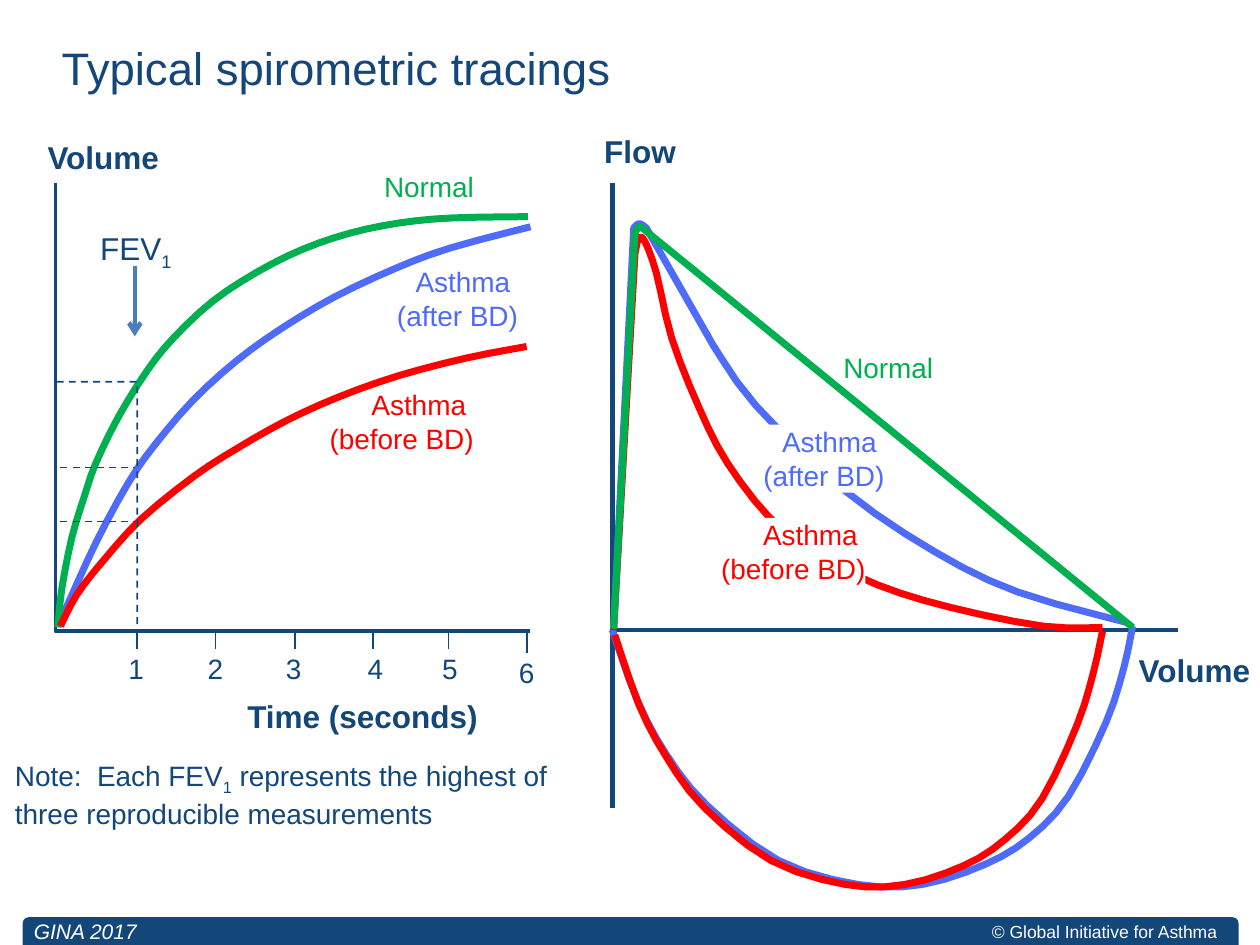
from lxml.etree import SubElement
from pptx import Presentation
from pptx.dml.color import RGBColor
from pptx.enum.dml import MSO_LINE
from pptx.enum.shapes import MSO_CONNECTOR, MSO_SHAPE
from pptx.enum.text import MSO_ANCHOR, PP_ALIGN
from pptx.oxml.ns import qn
from pptx.util import Inches, Pt

NAVY, GREEN, BLUE, RED, WHITE = "134679", "00B050", "4E6BFA", "FF0000", "FFFFFF"
LEFT, CENTER, RIGHT = PP_ALIGN.LEFT, PP_ALIGN.CENTER, PP_ALIGN.RIGHT
color = RGBColor.from_string

deck = Presentation()
deck.slide_width, deck.slide_height = Inches(10), Inches(7.5)
page = deck.slides.add_slide(deck.slide_layouts[6])


def add_text(text, left, top, width, height, size=16, ink=NAVY, align=RIGHT, bold=False,
             italic=False, wrap=False, inset=True, fill=None, anchor=MSO_ANCHOR.TOP):
    box = page.shapes.add_textbox(Inches(left), Inches(top), Inches(width), Inches(height))
    if fill:
        box.fill.solid()
        box.fill.fore_color.rgb = color(fill)
    frame = box.text_frame
    frame.word_wrap = wrap
    frame.vertical_anchor = anchor
    if not inset:
        frame.margin_left = frame.margin_right = frame.margin_top = frame.margin_bottom = 0
    para = frame.paragraphs[0]
    para.alignment = align
    for row, line in enumerate(text.split("\n")):
        if row:
            para.add_line_break()
        for part, words in enumerate(line.split("_")):
            if not words:
                continue
            span = para.add_run()
            span.text = words
            font = span.font
            font.name, font.size, font.bold, font.italic = "Arial", Pt(size), bold, italic
            font.color.rgb = color(ink)
            if part % 2:
                span._r.get_or_add_rPr().set("baseline", "-25000")


def add_path(knots, ink, width=4, dash=None):
    points = [knots[0]]
    padded = [knots[0], *knots, knots[-1]]
    for a, b, c, d in zip(padded, padded[1:], padded[2:], padded[3:]):
        if b == c:
            continue
        steps = 1 if a == b and c == d else 3
        for step in range(1, steps + 1):
            t = step / steps
            points.append([
                q + t * (r - p) / 2 + t**2 * (2 * p - 5 * q + 4 * r - s) / 2
                + t**3 * (3 * q - p - 3 * r + s) / 2
                for p, q, r, s in zip(a, b, c, d)])
    spots = [(Inches(x), Inches(y)) for x, y in points]
    builder = page.shapes.build_freeform(*spots[0], scale=1.0)
    builder.add_line_segments(spots[1:], close=False)
    curve = builder.convert_to_shape()
    curve.shadow.inherit = False
    curve.fill.background()
    curve.line.color.rgb = color(ink)
    curve.line.width = Pt(width)
    curve.line.dash_style = dash


footer = page.shapes.add_shape(MSO_SHAPE.ROUND_2_SAME_RECTANGLE,
                               Inches(0.18), Inches(7.28), Inches(9.65), Inches(0.24))
footer.shadow.inherit = False
footer.adjustments[0] = 0.2
footer.fill.solid()
footer.fill.fore_color.rgb = color(NAVY)
footer.line.fill.background()
add_text("© Global Initiative for Asthma", 7.82, 7.27, 1.89, 0.24, size=10, ink=WHITE,
         align=CENTER, inset=False, anchor=MSO_ANCHOR.MIDDLE)

add_text("Time (seconds)", 1.84, 5.48, 2.05, 0.4, size=18, bold=True)
add_text("Volume", 0.27, 1.05, 1.09, 0.4, size=18, bold=True)
add_text("Note:  Each FEV_1_ represents the highest of three reproducible measurements",
         0.02, 5.97, 4.48, 0.64, align=LEFT, wrap=True)
add_text("Typical spirometric tracings", 0.39, 0.27, 8.11, 1.02, size=26, align=LEFT, wrap=True)
add_text("FEV_1", 0.68, 1.77, 0.78, 0.4, size=18)

add_path([(0.44, 1.45), (0.44, 1.45), (0.44, 5.01), (0.44, 5.01), (4.21, 5.01), (4.21, 5.01)],
         NAVY, width=2)
volume_curves = [
    (BLUE, [(0.46, 4.97), (0.55, 4.77), (0.77, 4.29), (1.02, 3.83), (1.23, 3.53), (1.53, 3.18),
            (1.87, 2.87), (2.23, 2.61), (2.65, 2.36), (3.14, 2.13), (3.57, 1.97), (4.21, 1.8)]),
    (GREEN, [(0.46, 4.98), (0.49, 4.68), (0.57, 4.27), (0.67, 3.94), (0.76, 3.68), (0.94, 3.31),
             (1.17, 2.94), (1.38, 2.68), (1.69, 2.39), (2.04, 2.16), (2.4, 1.98), (2.78, 1.85),
             (3.17, 1.77), (3.59, 1.73), (4.19, 1.72)]),
    (RED, [(0.48, 4.97), (0.61, 4.72), (0.82, 4.45), (1.12, 4.12), (1.54, 3.78), (1.88, 3.56),
           (2.27, 3.34), (2.69, 3.15), (3.17, 2.98), (3.71, 2.84), (4.18, 2.75)]),
]
for ink, knots in volume_curves:
    add_path(knots, ink)
add_path([(0.45, 3.03), (0.45, 3.03), (1.09, 3.03), (1.09, 3.03), (1.09, 4.96), (1.09, 4.96)],
         NAVY, width=1, dash=MSO_LINE.DASH)

lines = [
    (0.48, 3.71, 1.07, 3.71, NAVY, 1, MSO_LINE.DASH, False),
    (0.48, 4.14, 1.07, 4.14, NAVY, 1, MSO_LINE.DASH, False),
    (1.07, 2.11, 1.07, 2.67, "4B7EBC", 2.5, None, True),
    (4.86, 1.45, 4.86, 6.41, NAVY, 2.5, None, False),
    (9.35, 5, 4.88, 5, NAVY, 2.5, None, False),
]
tick_places = [1.09, 1.71, 2.34, 2.96, 3.56, 4.18]
label_places = [0.92, 1.55, 2.17, 2.82, 3.41, 4.02]
for second, (x, label_left) in enumerate(zip(tick_places, label_places), 1):
    drop = 0.03 if second == 6 else 0
    lines.append((x, 5.15 + drop, x, 4.99 + drop, NAVY, 1, None, False))
    add_text(str(second), label_left, 5.12 + drop, 0.32, 0.37, align=CENTER)
for x1, y1, x2, y2, ink, width, dash, arrow in lines:
    line = page.shapes.add_connector(MSO_CONNECTOR.STRAIGHT, Inches(x1), Inches(y1),
                                     Inches(x2), Inches(y2))
    line.line.color.rgb = color(ink)
    line.line.width = Pt(width)
    line.line.dash_style = dash
    if arrow:
        SubElement(line.line._get_or_add_ln(), qn("a:tailEnd"), type="arrow")
    SubElement(line._element.spPr, qn("a:effectLst"))

add_text("Normal", 2.94, 1.3, 0.92, 0.37, ink=GREEN)
add_text("Asthma \n(after BD)", 3.04, 2.05, 1.17, 0.64, ink=BLUE)
add_text("Asthma \n(before BD)", 2.5, 3.03, 1.36, 0.64, ink=RED)
add_text("Flow", 4.66, 1, 0.84, 0.5, size=18, align=CENTER, bold=True)
add_text("Volume", 8.93, 5.12, 1.09, 0.4, size=18, bold=True)
add_text("Normal", 6.52, 2.73, 1.06, 0.37, ink=GREEN, align=CENTER)

add_path([(4.86, 5), (5.06, 5.56), (5.29, 5.99), (5.61, 6.39), (6.18, 6.83), (6.81, 7.02),
          (7.32, 7.02), (7.82, 6.86), (8.17, 6.65), (8.48, 6.32), (8.78, 5.73), (8.92, 5.3),
          (8.99, 4.97)], BLUE)
add_path([(4.87, 5), (4.87, 5), (5.04, 2.01), (5.04, 2.01), (5.07, 1.89), (5.12, 1.92),
          (5.21, 2.17), (5.33, 2.68), (5.55, 3.24), (5.77, 3.67), (6.11, 4.11), (6.47, 4.39),
          (6.96, 4.64), (7.54, 4.82), (8.28, 4.97), (8.75, 4.98)], RED)
add_path([(4.87, 4.98), (4.87, 4.98), (5.03, 1.81), (5.03, 1.81), (5.06, 1.78), (5.09, 1.78),
          (5.13, 1.81), (5.13, 1.81), (5.66, 2.74), (5.66, 2.74), (6, 3.22), (6.7, 3.89),
          (7.42, 4.38), (8.08, 4.7), (8.94, 4.94)], BLUE)
add_text("Asthma \n(after BD)", 6.05, 3.37, 0.97, 0.54, ink=BLUE, inset=False, fill=WHITE)
add_text("Asthma \n(before BD)", 5.71, 4.11, 1.16, 0.54, ink=RED, inset=False, fill=WHITE)
add_path([(4.87, 4.99), (4.87, 4.99), (5.04, 1.85), (5.04, 1.85), (5.07, 1.8), (5.11, 1.82),
          (5.11, 1.82), (8.99, 4.98), (8.99, 4.98)], GREEN)
add_path([(4.88, 5.04), (5.07, 5.59), (5.29, 6.01), (5.59, 6.41), (6.12, 6.83), (6.71, 7.02),
          (7.18, 7.02), (7.65, 6.87), (7.98, 6.66), (8.27, 6.34), (8.55, 5.75), (8.68, 5.33),
          (8.75, 5.01)], RED)
add_text("GINA 2017", 0.17, 7.24, 2.24, 0.3, size=12, ink=WHITE, align=LEFT,
         italic=True, wrap=True)

deck.save("out.pptx")
